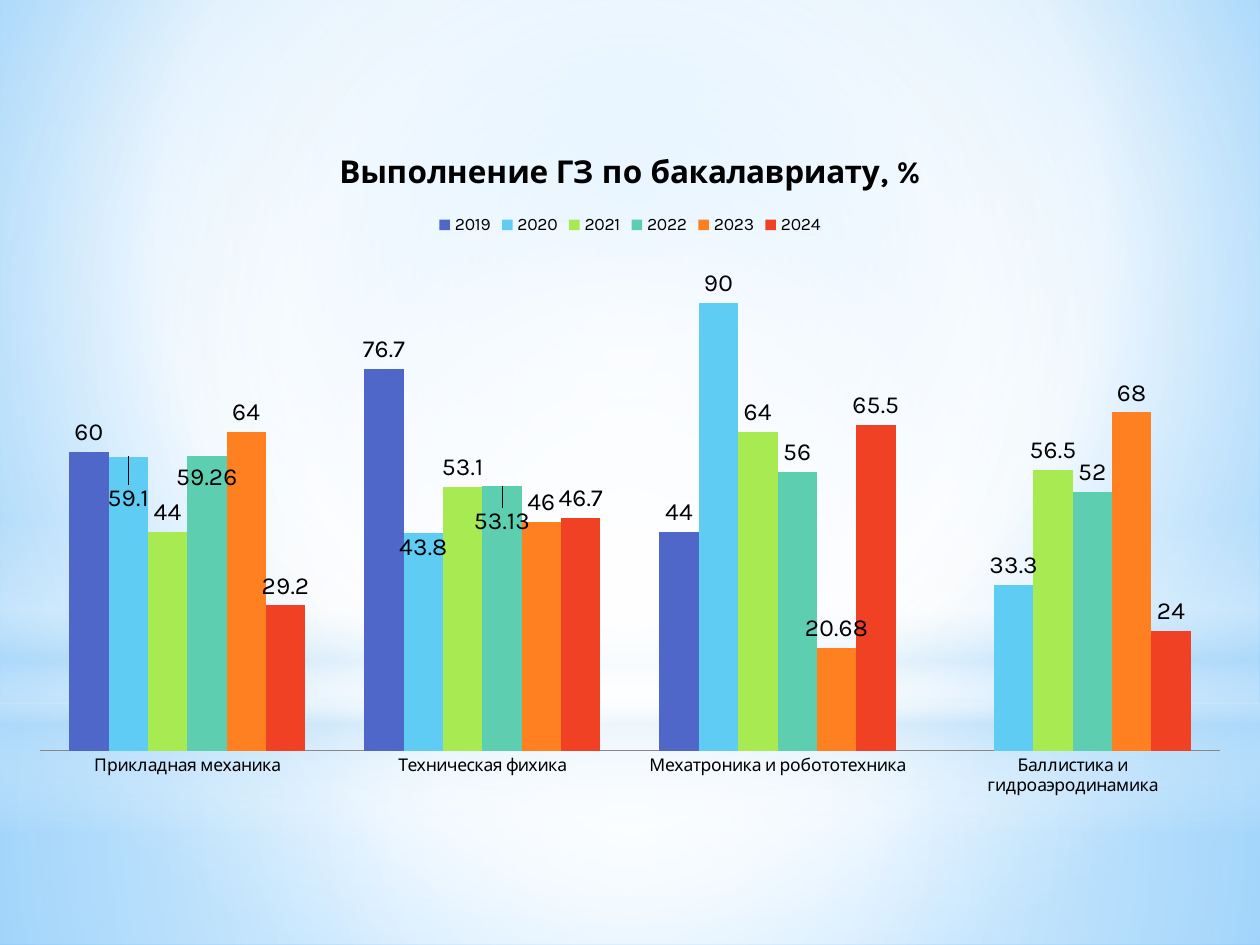
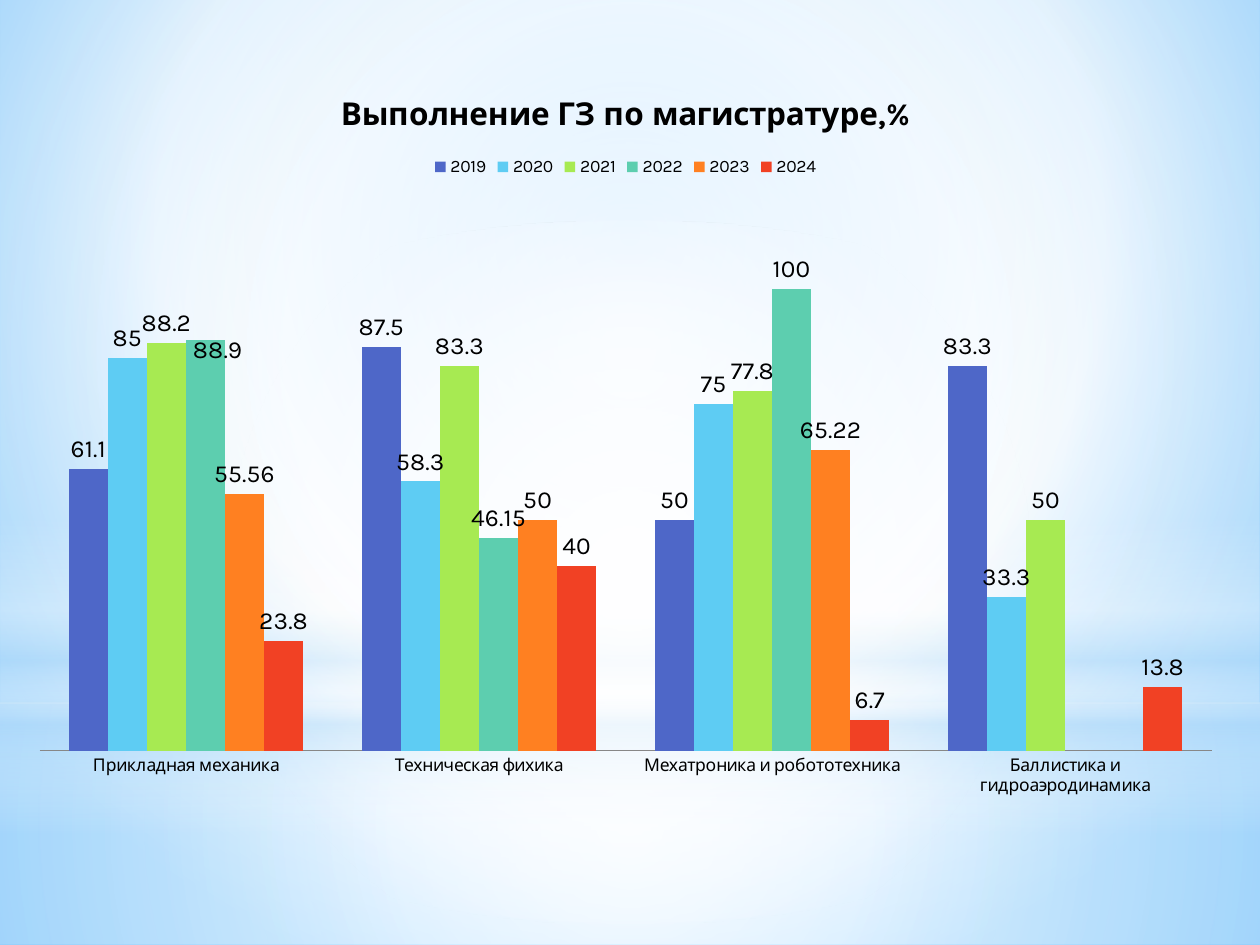
from dataclasses import dataclass
from typing import NamedTuple

from lxml import etree
from pptx import Presentation
from pptx.chart.data import CategoryChartData
from pptx.chart.series import BarSeries
from pptx.dml.color import RGBColor
from pptx.enum.chart import XL_CHART_TYPE as ChartType
from pptx.enum.chart import XL_LABEL_POSITION as LabelPos
from pptx.enum.chart import XL_LEGEND_POSITION as LegendPos
from pptx.enum.chart import XL_TICK_MARK as TickMark
from pptx.enum.shapes import MSO_SHAPE as Shape
from pptx.oxml import parse_xml
from pptx.oxml.ns import nsdecls, qn
from pptx.slide import Slide, SlideMaster
from pptx.text.text import Font
from pptx.util import Inches, Pt


@dataclass(frozen=True)
class Theme:
    font: str = "Karla"
    text: str = "000000"
    axis: str = "878787"
    glow: str = "FFFFFF"
    haze: str = "B4DCFA"
    sky: str = "9ED5FF"
    edge: str = "5BB9FF"
    bars: tuple[str, ...] = ("4E67C8", "5ECCF3", "A7EA52", "5DCEAF", "FF8021", "F14124")
    title_size: int = 18
    label_size: int = 14
    base_size: int = 10


THEME = Theme()


class Stop(NamedTuple):
    pos: int
    color: str
    alpha: int = 100


class Gradient(NamedTuple):
    stops: tuple[Stop, ...]
    center: tuple[int, int, int, int] | None = (50, 50, 50, 50)


class Light(NamedTuple):
    kind: Shape
    top: float
    height: float
    gradient: Gradient


class Moved(NamedTuple):
    year: str
    group: int
    dx: float
    dy: float


class Report(NamedTuple):
    title: str
    left: float
    top: float
    width: float
    height: float
    maximum: int
    values: dict[str, tuple[float | None, ...]]
    moved: tuple[Moved, ...]


PROGRAMS = (
    "Прикладная механика",
    "Техническая фихика",
    "Мехатроника и робототехника",
    "Баллистика и гидроаэродинамика",
)

BACKGROUND = Gradient(
    (Stop(0, THEME.sky), Stop(60, THEME.glow), Stop(100, THEME.edge)), (20, 10, 20, 60)
)

LIGHTS = (
    Light(Shape.RECTANGLE, 5.58, 1.92, Gradient(
        (Stop(0, THEME.glow, 91), Stop(37, THEME.glow, 76), Stop(100, THEME.haze, 79)))),
    Light(Shape.RECTANGLE, 0, 5.58, Gradient(
        (Stop(0, THEME.glow, 89), Stop(48, THEME.glow, 62), Stop(100, THEME.haze, 79)))),
    Light(Shape.RECTANGLE, 4.12, 2.5, Gradient(
        (Stop(0, THEME.glow, 0), Stop(29, THEME.glow, 30), Stop(45, THEME.haze, 40),
         Stop(55, THEME.glow, 26), Stop(65, THEME.haze, 60), Stop(100, THEME.glow, 0)), None)),
    Light(Shape.OVAL, 1.75, 5.58, Gradient(
        (Stop(0, THEME.glow), Stop(56, THEME.glow, 0)))),
)

REPORTS = (
    Report(
        "Выполнение ГЗ по бакалавриату, %", 0.12, 0.99, 9.76, 5.43, 100,
        {
            "2019": (60, 76.7, 44, None),
            "2020": (59.1, 43.8, 90, 33.3),
            "2021": (44, 53.1, 64, 56.5),
            "2022": (59.26, 53.13, 56, 52),
            "2023": (64, 46, 20.68, 68),
            "2024": (29.2, 46.7, 65.5, 24),
        },
        (Moved("2020", 0, 0, 0.09), Moved("2020", 1, 0, 0.05),
         Moved("2022", 0, 0, 0.06), Moved("2022", 1, 0, 0.08)),
    ),
    Report(
        "Выполнение ГЗ по магистратуре,%", 0.12, 0.52, 9.69, 5.91, 120,
        {
            "2019": (61.1, 87.5, 50, 83.3),
            "2020": (85, 58.3, 75, 33.3),
            "2021": (88.2, 83.3, 77.8, 50),
            "2022": (88.9, 46.15, 100, None),
            "2023": (55.56, 50, 65.22, None),
            "2024": (23.8, 40, 6.7, 13.8),
        },
        (Moved("2022", 0, 0.01, 0.04),),
    ),
)


def set_font(font: Font, size: int, bold: bool = False) -> None:
    font.name = THEME.font
    font.size = Pt(size)
    font.bold = bold
    font.color.rgb = RGBColor.from_string(THEME.text)


def apply_gradient(holder: etree._Element, gradient: Gradient) -> None:
    stops = "".join(
        f'<a:gs pos="{stop.pos * 1000}"><a:srgbClr val="{stop.color}">'
        f'<a:alpha val="{stop.alpha * 1000}"/></a:srgbClr></a:gs>'
        for stop in gradient.stops
    )
    if gradient.center is None:
        direction = '<a:lin ang="5400000" scaled="0"/>'
    else:
        sides = " ".join(
            f'{side}="{value * 1000}"' for side, value in zip("ltrb", gradient.center)
        )
        direction = f'<a:path path="circle"><a:fillToRect {sides}/></a:path>'
    fill = parse_xml(
        f'<a:gradFill {nsdecls("a")} rotWithShape="1">'
        f"<a:gsLst>{stops}</a:gsLst>{direction}</a:gradFill>"
    )
    holder.replace(holder.find(qn("a:solidFill")), fill)


def decorate_master(master: SlideMaster, s: Slide) -> None:
    master.background.fill.solid()
    apply_gradient(master.element.find(".//" + qn("p:bgPr")), BACKGROUND)
    for index, light in enumerate(LIGHTS):
        sp = s.shapes.add_shape(
            light.kind, 0, Inches(light.top), Inches(10), Inches(light.height)
        )
        sp.shadow.inherit = False
        sp.line.fill.background()
        sp.fill.solid()
        apply_gradient(sp.element.spPr, light.gradient)
        sp.element.nvSpPr.cNvPr.set("id", str(100 + index))
        master.shapes.element.insert(2 + index, sp.element)


def move_label(series: BarSeries, moved: Moved) -> None:
    label = series.points[moved.group].data_label
    set_font(label.font, THEME.label_size)
    label.position = LabelPos.OUTSIDE_END
    layout = parse_xml(
        f'<c:layout {nsdecls("c")}><c:manualLayout>'
        f'<c:x val="{moved.dx}"/><c:y val="{moved.dy}"/>'
        "</c:manualLayout></c:layout>"
    )
    for node in series.data_labels._element.findall(qn("c:dLbl")):
        index = node.find(qn("c:idx"))
        if index.get("val") == str(moved.group):
            index.addnext(layout)


def add_report(s: Slide, report: Report) -> None:
    data = CategoryChartData()
    data.categories = PROGRAMS
    for year, values in report.values.items():
        data.add_series(year, values)
    box = map(Inches, (report.left, report.top, report.width, report.height))
    chart = s.shapes.add_chart(ChartType.COLUMN_CLUSTERED, *box, data).chart
    set_font(chart.font, THEME.base_size)

    tf = chart.chart_title.text_frame
    tf.text = report.title
    set_font(tf.paragraphs[0].font, THEME.title_size, bold=True)
    chart.chart_title.include_in_layout = False

    chart.has_legend = True
    chart.legend.position = LegendPos.TOP
    chart.legend.include_in_layout = False

    axis = chart.category_axis
    axis.major_tick_mark = axis.minor_tick_mark = TickMark.NONE
    axis.format.line.color.rgb = RGBColor.from_string(THEME.axis)
    scale = chart.value_axis
    scale.visible = False
    scale.has_major_gridlines = False
    scale.minimum_scale, scale.maximum_scale = 0, report.maximum

    plot = chart.plots[0]
    plot.gap_width = 150
    plot.overlap = 0
    plot.vary_by_categories = False
    for series, color in zip(plot.series, THEME.bars):
        series.format.fill.solid()
        series.format.fill.fore_color.rgb = RGBColor.from_string(color)
        series.invert_if_negative = False
        labels = series.data_labels
        labels.show_value = True
        labels.position = LabelPos.OUTSIDE_END
        set_font(labels.font, THEME.label_size)
        for moved in report.moved:
            if moved.year == series.name:
                move_label(series, moved)


def main() -> None:
    prs = Presentation()
    prs.slide_width, prs.slide_height = Inches(10), Inches(7.5)
    blank = prs.slide_layouts.get_by_name("Blank")
    slides = [prs.slides.add_slide(blank) for _ in REPORTS]
    decorate_master(prs.slide_master, slides[0])
    for s, report in zip(slides, REPORTS):
        add_report(s, report)
    prs.save("out.pptx")


if __name__ == "__main__":
    main()
